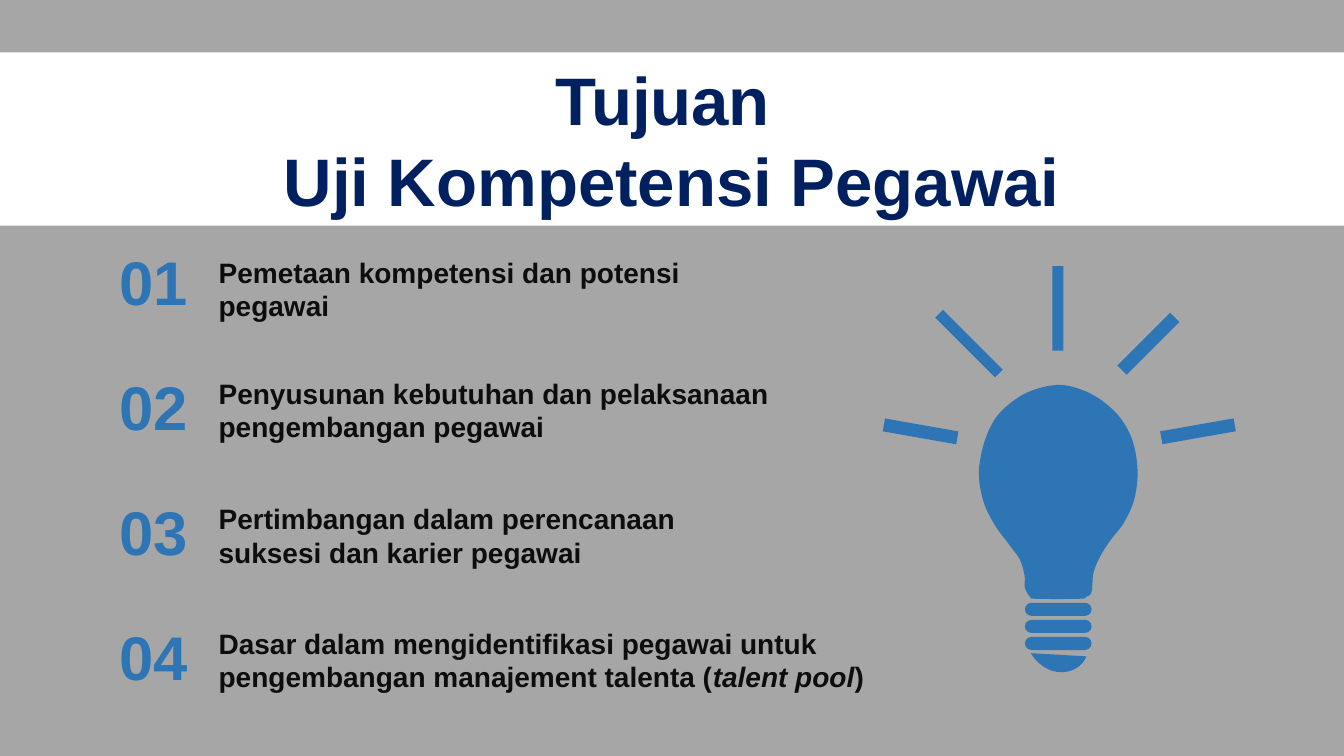
from pptx import Presentation, util as u
from pptx.dml.color import RGBColor
from pptx.enum import shapes, text

HUES = {"back": "A6A6A6", "band": "FFFFFF", "title": "002060",
        "blue": "2E75B6", "ink": "0D0D0D"}
TITLE = ["Tujuan ", "Uji Kompetensi Pegawai"]
GOALS = [
    (6.3, 12.52, ["Pemetaan kompetensi dan potensi pegawai"]),
    (9.35, 15.7, ["Penyusunan kebutuhan dan pelaksanaan pengembangan pegawai"]),
    (12.52, 12.52, ["Pertimbangan dalam perencanaan suksesi dan karier pegawai"]),
    (15.65, 19.74, ["Dasar dalam mengidentifikasi pegawai untuk "
                    "pengembangan manajement talenta (", "talent pool", ")"]),
]
RAYS = [(26.66, 7.77, 0.28, 2.13, 0), (24.42, 8.66, 0.28, 2.13, 135),
        (23.2, 10.87, 0.33, 1.88, 280), (28.94, 8.66, 0.33, 1.88, 225),
        (30.19, 10.87, 0.33, 1.88, 80)]
BULB = [(26.7, 9.7), (27.28, 9.83), (27.79, 10.11), (28.24, 10.54),
        (28.55, 11.13), (28.67, 11.89), (28.58, 12.6), (28.32, 13.18),
        (27.99, 13.61), (27.74, 14), (27.56, 14.43), (27.51, 14.91),
        (27.38, 15.04), (27.2, 15.09), (26.11, 15.09), (25.96, 15.04),
        (25.83, 14.81), (25.82, 14.5), (25.7, 14.1), (25.43, 13.72),
        (25.07, 13.23), (24.79, 12.65), (24.67, 11.94), (24.79, 11.2),
        (25.07, 10.57), (25.5, 10.13), (26.04, 9.83)]
TIP = [[(27.38, 16.54), (27.28, 16.79), (27.03, 16.94), (26.75, 16.94)],
       [(26.75, 16.94), (26.44, 16.94), (26.14, 16.74), (25.98, 16.46)]]
RECT = shapes.MSO_SHAPE.RECTANGLE
ROUND = shapes.MSO_SHAPE.ROUNDED_RECTANGLE
MID = text.PP_ALIGN.CENTER
LEFT = text.PP_ALIGN.LEFT


def tint(hue):
    return RGBColor.from_string(HUES[hue])


def paint(shape, hue):
    shape.shadow.inherit = False
    shape.fill.solid()
    shape.fill.fore_color.rgb = tint(hue)
    shape.line.fill.background()
    return shape


def block(slide, kind, box, hue):
    return paint(slide.shapes.add_shape(kind, *map(u.Cm, box)), hue)


def write(frame, lines, size, hue, align):
    form = {"word_wrap": True, "margin_left": u.Cm(0.3), "margin_right": u.Cm(0.3),
            "margin_top": u.Cm(0.13), "margin_bottom": u.Cm(0.13)}
    for name, value in form.items():
        setattr(frame, name, value)
    for row, parts in enumerate(lines):
        para = frame.add_paragraph() if row else frame.paragraphs[0]
        para.alignment = align
        for spot, part in enumerate(parts):
            run = para.add_run()
            run.text = part
            look = {"name": "Arial", "size": u.Pt(size), "bold": True,
                    "italic": spot == 1}
            for name, value in look.items():
                setattr(run.font, name, value)
            run.font.color.rgb = tint(hue)


def label(slide, box, parts, size, hue, align):
    area = slide.shapes.add_textbox(*map(u.Cm, box))
    write(area.text_frame, [parts], size, hue, align)


def curve(knots, steps=8):
    for step in range(steps + 1):
        t = step / steps
        rates = ((1 - t) ** 3, 3 * t * (1 - t) ** 2, 3 * t * t * (1 - t), t ** 3)
        yield tuple(sum(r * k[axis] for r, k in zip(rates, knots)) for axis in (0, 1))


def smooth(knots):
    for i, start in enumerate(knots):
        prior, end = knots[i - 1], knots[(i + 1) % len(knots)]
        after = knots[(i + 2) % len(knots)]
        first = tuple(s + (e - p) / 6 for p, s, e in zip(prior, start, end))
        last = tuple(e - (a - s) / 6 for s, e, a in zip(start, end, after))
        yield [start, first, last, end]


def outline(slide, curves):
    dots = [(u.Cm(x), u.Cm(y)) for knots in curves for x, y in curve(knots)]
    form = slide.shapes.build_freeform(*dots[0], scale=1.0)
    form.add_line_segments(dots[1:], close=True)
    paint(form.convert_to_shape(), "blue")


def main():
    deck = Presentation()
    deck.slide_width, deck.slide_height = u.Cm(33.87), u.Cm(19.05)
    slide = deck.slides.add_slide(deck.slide_layouts[6])
    slide.background.fill.solid()
    slide.background.fill.fore_color.rgb = tint("back")

    band = block(slide, RECT, (0, 1.32, 33.87, 4.37), "band")
    band.text_frame.vertical_anchor = text.MSO_ANCHOR.MIDDLE
    write(band.text_frame, [[line] for line in TITLE], 48, "title", MID)

    for i, (top, width, parts) in enumerate(GOALS):
        label(slide, (2.54, 6.02 + 3.15 * i, 2.67, 2.13), [f"{i + 1:02}"],
              44, "blue", MID)
        label(slide, (5.21, top, width, 1.96), parts, 20, "ink", LEFT)

    for i in range(3):
        ring = block(slide, ROUND, (25.83, 15.19 + 0.43 * i, 1.68, 0.33), "blue")
        ring.adjustments[0] = 0.5
    outline(slide, TIP)
    outline(slide, smooth(BULB))
    for x, y, width, height, turn in RAYS:
        ray = block(slide, RECT, (x - width / 2, y - height / 2, width, height), "blue")
        ray.rotation = turn

    deck.save("out.pptx")


if __name__ == "__main__":
    main()
